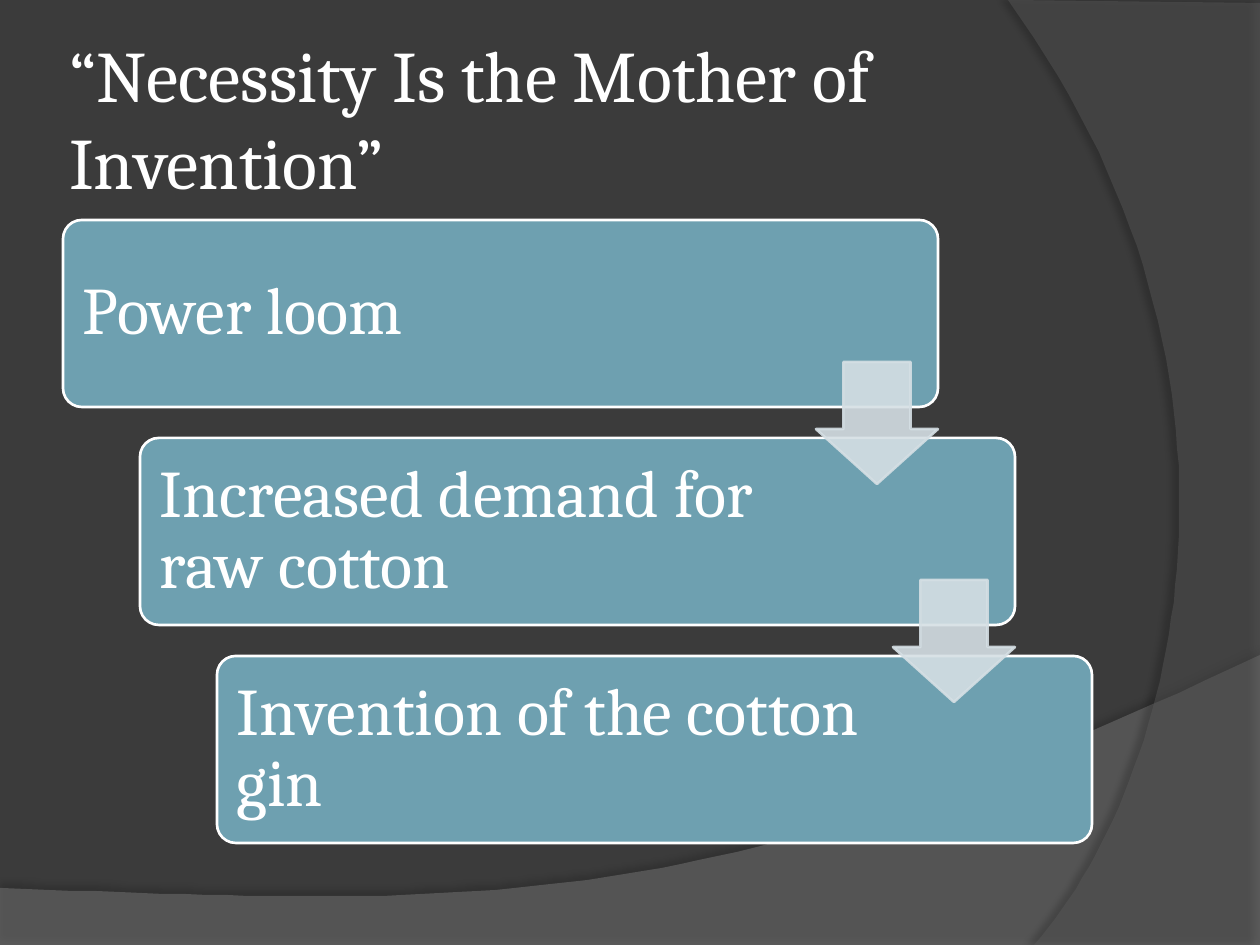
from lxml.etree import SubElement
from pptx import Presentation
from pptx.dml.color import RGBColor
from pptx.enum.shapes import MSO_SHAPE
from pptx.enum.text import MSO_ANCHOR
from pptx.oxml.ns import qn
from pptx.util import Pt

PX = 914400 // 126
COLORS = {
    "background": "3B3B3B",
    "wave": "7F7F7F",
    "arc": "5E5E5E",
    "card": "6EA0B0",
    "arrow": "D5DFE4",
    "white": "FFFFFF",
    "black": "000000",
}
STEPS = [
    ("Power loom", 684),
    ("Increased demand for raw cotton", 675),
    ("Invention of the cotton gin", 675),
]
CARD_LEFT, CARD_TOP, CARD_WIDTH, CARD_HEIGHT = 63, 220, 875, 187
STEP_X, STEP_Y = 77, 218
ARROW_SIZE, ARROW_DROP = 122, 142


def emu(*lengths):
    """Turn px lengths into EMU."""
    return [length * PX for length in lengths]


def paint(color_format, name, alpha=100):
    """Set a solid fill by colour name and opacity in percent."""
    color_format.solid()
    color_format.fore_color.rgb = RGBColor.from_string(COLORS[name])
    if alpha < 100:
        color = color_format._xPr.find(qn("a:solidFill"))[0]
        SubElement(color, qn("a:alpha"), val=str(alpha * 1000))


def curve(start, control_a, control_b, end, pieces=60):
    """Return points along a cubic curve, without its start."""
    points = []
    for piece in range(1, pieces + 1):
        t = piece / pieces
        weights = ((1 - t) ** 3, 3 * t * (1 - t) ** 2, 3 * t * t * (1 - t), t**3)
        corners = (start, control_a, control_b, end)
        points.append(tuple(
            sum(weight * corner[axis] for weight, corner in zip(weights, corners))
            for axis in (0, 1)
        ))
    return points


def add_backdrop(slide, points, color, alpha, shadow):
    """Add a translucent background outline with an outer shadow."""
    builder = slide.shapes.build_freeform(*points[0], scale=PX)
    builder.add_line_segments(points[1:], close=True)
    backdrop = builder.convert_to_shape()
    paint(backdrop.fill, color, alpha)
    backdrop.line.fill.background()
    backdrop.shadow.inherit = False
    opacity, blur, distance, angle = shadow
    effects = backdrop._element.spPr.find(qn("a:effectLst"))
    outer = SubElement(
        effects, qn("a:outerShdw"), blurRad=str(Pt(blur)), dist=str(Pt(distance)),
        dir=str(angle * 60000), algn="ctr", rotWithShape="0",
    )
    shade = SubElement(outer, qn("a:srgbClr"), val=COLORS["black"])
    SubElement(shade, qn("a:alpha"), val=str(opacity * 1000))


def add_text(slide, box, words, size, inset, paragraph_format=None):
    """Add white, vertically centred text."""
    frame = slide.shapes.add_textbox(*emu(*box)).text_frame
    margins = {f"margin_{side}": inset * PX for side in ("left", "top", "right", "bottom")}
    layout = {"word_wrap": True, "vertical_anchor": MSO_ANCHOR.MIDDLE, **margins}
    for name, value in layout.items():
        setattr(frame, name, value)
    paragraph = frame.paragraphs[0]
    for name, value in (paragraph_format or {}).items():
        setattr(paragraph, name, value)
    run = paragraph.add_run()
    run.text = words
    for name, value in {"name": "Cambria", "size": Pt(size)}.items():
        setattr(run.font, name, value)
    paint(run.font.fill, "white")


def add_block(slide, preset, box, adjustments, fill, line, alpha=100):
    """Add a filled and outlined preset shape."""
    block = slide.shapes.add_shape(preset, *emu(*box))
    for index, value in enumerate(adjustments):
        block.adjustments[index] = value
    block.shadow.inherit = False
    paint(block.fill, fill, alpha)
    paint(block.line.fill, line, alpha)
    block.line.width = Pt(1.5)


def add_card(slide, index, words, text_width):
    """Add one step of the staircase."""
    left, top = CARD_LEFT + index * STEP_X, CARD_TOP + index * STEP_Y
    add_block(slide, MSO_SHAPE.ROUNDED_RECTANGLE, (left, top, CARD_WIDTH, CARD_HEIGHT),
              [0.1], "card", "white")
    add_text(slide, (left, top, text_width, CARD_HEIGHT), words, 38, 20,
             {"line_spacing": 0.9, "space_after": Pt(13)})


def add_arrow(slide, index):
    """Add the arrow from one step to the next."""
    left = CARD_LEFT + CARD_WIDTH - ARROW_SIZE + index * STEP_X
    top = CARD_TOP + ARROW_DROP + index * STEP_Y
    add_block(slide, MSO_SHAPE.DOWN_ARROW, (left, top, ARROW_SIZE, ARROW_SIZE),
              [0.55, 0.45], "arrow", "arrow", 90)


def main():
    """Build and save the slide."""
    presentation = Presentation()
    presentation.slide_width, presentation.slide_height = emu(1260, 945)
    slide = presentation.slides.add_slide(presentation.slide_layouts[6])
    paint(slide.background.fill, "background")

    wave = [(0, 888), (0, 946), (1260, 946), (1260, 655)]
    wave += curve(wave[-1], (704, 919), (493, 906), wave[0])
    add_backdrop(slide, wave, "wave", 45, (35, 4, 3.5, 270))
    arc = [(1260, 3), (1260, 945), (1034, 945)]
    arc += curve(arc[-1], (1178, 780), (1283, 378), (1008, 0))
    add_backdrop(slide, arc, "arc", 40, (45, 4, 4, 180))

    add_text(slide, (63, 38, 1029, 158), "“Necessity Is the Mother of Invention”", 41.4, 6)
    for index, (words, text_width) in enumerate(STEPS):
        add_card(slide, index, words, text_width)
    for index in range(len(STEPS) - 1):
        add_arrow(slide, index)
    presentation.save("out.pptx")


if __name__ == "__main__":
    main()
